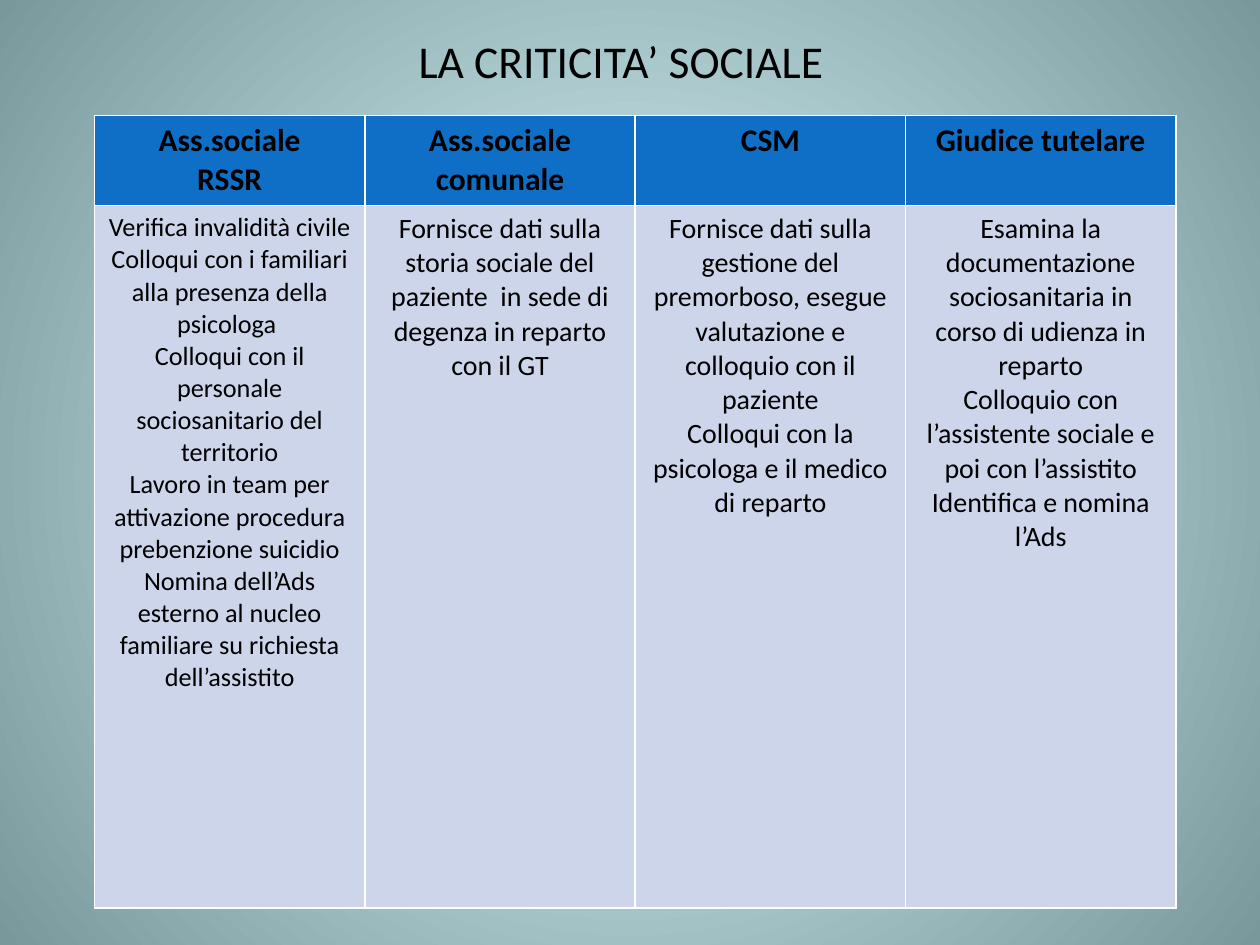
"""Build the slide on the social criticality: a title above a table of four roles."""
from lxml.etree import SubElement
from pptx import Presentation
from pptx.dml.color import RGBColor
from pptx.enum.text import MSO_ANCHOR, PP_ALIGN
from pptx.oxml import parse_xml
from pptx.oxml.ns import nsdecls, qn
from pptx.util import Pt

TITLE = "LA CRITICITA’ SOCIALE"
ROLES = [
    {"name": ["Ass.sociale", "RSSR"], "size": 15, "tasks": [
        "Verifica invalidità civile",
        "Colloqui con i familiari alla presenza della psicologa ",
        "Colloqui con il personale sociosanitario del territorio",
        "Lavoro in team per attivazione procedura prebenzione suicidio",
        "Nomina dell’Ads esterno al nucleo familiare su richiesta dell’assistito"]},
    {"name": ["Ass.sociale comunale"], "size": 16, "tasks": [
        "Fornisce dati sulla storia sociale del paziente  in sede di degenza in reparto con il GT"]},
    {"name": ["CSM"], "size": 16, "tasks": [
        "Fornisce dati sulla gestione del premorboso, esegue valutazione e colloquio con il paziente",
        "Colloqui con la psicologa e il medico di reparto"]},
    {"name": ["Giudice tutelare"], "size": 16, "tasks": [
        "Esamina la documentazione sociosanitaria in corso di udienza in reparto",
        "Colloquio con l’assistente sociale e poi con l’assistito",
        "Identifica e nomina l’Ads"]},
]
COLORS = {"text": "000000", "header": "0F6FC6", "body": "CCD5EA", "border": "FFFFFF",
          "center": "DEFBFF", "edge": "79989C"}
FONT = "Calibri"
TABLE_LEFT, TABLE_TOP = 54, 66
COLUMN_WIDTH = 154.5
ROW_HEIGHTS = [51.4, 401.6]


def write(frame, lines, size, bold=False):
    for index, line in enumerate(lines):
        para = frame.paragraphs[0] if index == 0 else frame.add_paragraph()
        para.alignment = PP_ALIGN.CENTER
        span = para.add_run()
        span.text = line
        span.font.name = FONT
        span.font.size = Pt(size)
        span.font.bold = bold
        span.font.color.rgb = RGBColor.from_string(COLORS["text"])


def paint_background(page):
    fill = page.background.fill
    fill.gradient()
    for stop, name, position in zip(fill.gradient_stops, ("center", "edge"), (0, 1)):
        stop.color.rgb = RGBColor.from_string(COLORS[name])
        stop.position = position
    gradient = next(page.background._cSld.iter(qn("a:gradFill")))
    gradient.remove(gradient.find(qn("a:lin")))
    circle = SubElement(gradient, qn("a:path"), path="circle")
    SubElement(circle, qn("a:fillToRect"), l="50000", t="50000", r="50000", b="50000")


def style_cell(cell, color):
    cell.fill.solid()
    cell.fill.fore_color.rgb = RGBColor.from_string(COLORS[color])
    properties = cell._tc.get_or_add_tcPr()
    for index, side in enumerate("LRTB"):
        properties.insert(index, parse_xml(
            f'<a:ln{side} {nsdecls("a")} w="{Pt(1)}"><a:solidFill>'
            f'<a:srgbClr val="{COLORS["border"]}"/></a:solidFill></a:ln{side}>'))


def add_title(page):
    box = page.shapes.add_textbox(Pt(31), Pt(15), Pt(648), Pt(39))
    frame = box.text_frame
    frame.word_wrap = True
    frame.vertical_anchor = MSO_ANCHOR.MIDDLE
    write(frame, [TITLE], 26)


def add_roles(page):
    table = page.shapes.add_table(
        len(ROW_HEIGHTS), len(ROLES), Pt(TABLE_LEFT), Pt(TABLE_TOP),
        Pt(COLUMN_WIDTH * len(ROLES)), Pt(sum(ROW_HEIGHTS))).table
    for row, height in zip(table.rows, ROW_HEIGHTS):
        row.height = Pt(height)
    for index, role in enumerate(ROLES):
        table.columns[index].width = Pt(COLUMN_WIDTH)
        header, body = table.cell(0, index), table.cell(1, index)
        style_cell(header, "header")
        style_cell(body, "body")
        write(header.text_frame, role["name"], 18, bold=True)
        write(body.text_frame, role["tasks"], role["size"])


def main():
    deck = Presentation()
    deck.slide_width, deck.slide_height = Pt(720), Pt(540)
    page = deck.slides.add_slide(deck.slide_layouts[6])
    paint_background(page)
    add_title(page)
    add_roles(page)
    deck.save("out.pptx")


if __name__ == "__main__":
    main()
